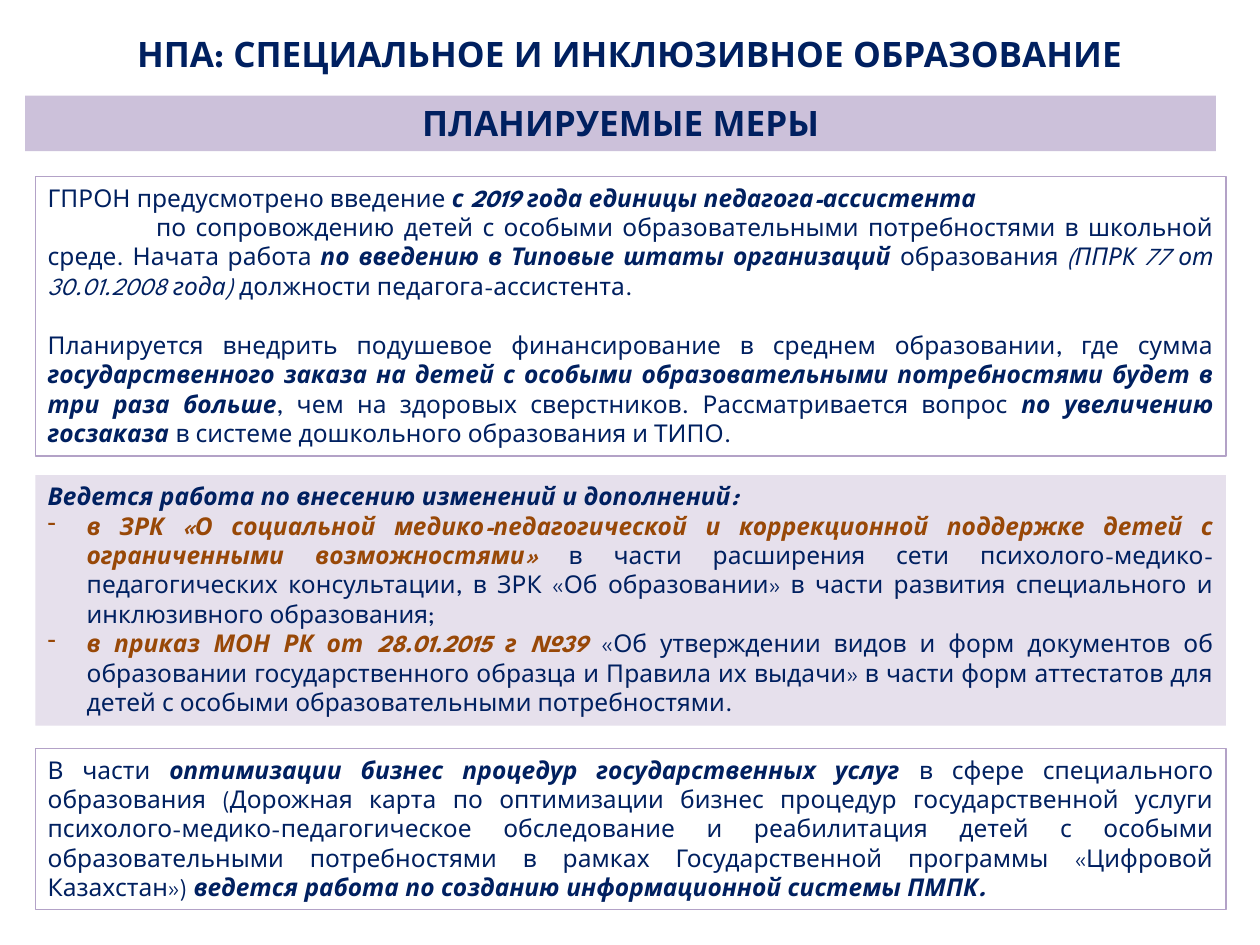
from lxml import etree
from pptx import Presentation
from pptx.dml.color import RGBColor
from pptx.enum.shapes import MSO_SHAPE
from pptx.enum.text import MSO_ANCHOR, MSO_AUTO_SIZE, PP_ALIGN
from pptx.oxml.ns import qn
from pptx.util import Inches, Pt

THEME = {
    "font": "League Spartan",
    "title_size": 20,
    "body_size": 14,
    "navy": "002060",
    "brown": "984807",
    "white": "FFFFFF",
    "banner": "CCC1DA",
    "panel": "E6E0EC",
    "border": "B3A2C7",
}
STYLES = {
    "plain": {},
    "italic": {"italic": True},
    "strong": {"bold": True, "italic": True},
    "accent": {"bold": True, "italic": True, "color": "brown"},
}

TITLE = "НПА: СПЕЦИАЛЬНОЕ И ИНКЛЮЗИВНОЕ ОБРАЗОВАНИЕ"
BANNER = "ПЛАНИРУЕМЫЕ МЕРЫ"

# Each paragraph: its layout options and its (style, text) runs.
ASSISTANTS = [
    ({}, [
        ("plain", "ГПРОН предусмотрено введение "),
        ("strong", "с 2019 года единицы педагога-ассистента"),
    ]),
    ({"indent": 0.86}, [
        ("plain", "по сопровождению детей с особыми образовательными потребностями "
                  "в школьной среде. Начата работа "),
        ("strong", "по введению в Типовые штаты организаций "),
        ("plain", "образования "),
        ("italic", "(ППРК 77 от 30.01.2008 года)"),
        ("plain", " должности педагога-ассистента."),
    ]),
    ({"space_before": 16.8}, [
        ("plain", "Планируется внедрить подушевое финансирование в среднем образовании, "
                  "где сумма "),
        ("strong", "государственного заказа на детей с особыми образовательными "
                   "потребностями будет в три раза больше"),
        ("plain", ", чем на здоровых сверстников. Рассматривается вопрос "),
        ("strong", "по увеличению госзаказа "),
        ("plain", "в системе дошкольного образования и ТИПО."),
    ]),
]
AMENDMENTS = [
    ({}, [("strong", "Ведется работа по внесению изменений и дополнений:")]),
    ({"bullet": "-"}, [
        ("accent", "в ЗРК «О социальной медико-педагогической и коррекционной поддержке "
                   "детей с ограниченными возможностями» "),
        ("plain", "в части расширения сети психолого-медико-педагогических консультации, "
                  "в ЗРК «Об образовании» в части развития специального и инклюзивного "
                  "образования;"),
    ]),
    ({"bullet": "-"}, [
        ("accent", "в приказ МОН РК от 28.01.2015 г №39 "),
        ("plain", "«Об утверждении видов и форм документов об образовании "
                  "государственного образца и Правила их выдачи» в части форм аттестатов "
                  "для детей с особыми образовательными потребностями."),
    ]),
]
SERVICES = [
    ({}, [
        ("plain", "В части "),
        ("strong", "оптимизации бизнес процедур государственных услуг "),
        ("plain", "в сфере специального образования (Дорожная карта по оптимизации бизнес "
                  "процедур государственной услуги психолого-медико-педагогическое "
                  "обследование и реабилитация детей с особыми образовательными "
                  "потребностями в рамках Государственной программы «Цифровой Казахстан») "),
        ("strong", "ведется работа по созданию информационной системы ПМПК."),
    ]),
]

PANEL_LEFT, PANEL_WIDTH = 0.28, 9.45
PANELS = [  # top, height, fill, line, paragraphs
    (1.4, 2.22, None, "border", ASSISTANTS),
    (3.77, 1.99, "panel", None, AMENDMENTS),
    (5.94, 1.28, None, "border", SERVICES),
]


def theme_color(name):
    return RGBColor.from_string(THEME[name])


def add_text(paragraph, text, size="body_size", color="navy", bold=False, italic=False):
    run = paragraph.add_run()
    run.text = text
    font = run.font
    font.name, font.size = THEME["font"], Pt(THEME[size])
    font.bold, font.italic = bold, italic
    font.color.rgb = theme_color(color)


def set_layout(paragraph, indent=0, bullet=None, space_before=0):
    paragraph.alignment = PP_ALIGN.JUSTIFY
    paragraph.space_before = Pt(space_before)
    properties = paragraph._p.get_or_add_pPr()
    hanging = 0.31 if bullet else 0
    properties.set("marL", str(Inches(hanging)))
    properties.set("indent", str(Inches(indent - hanging)))
    if bullet:
        etree.SubElement(properties, qn("a:buChar")).set("char", bullet)


def format_box(shape, fill=None, line=None, anchor=MSO_ANCHOR.TOP):
    if fill:
        shape.fill.solid()
        shape.fill.fore_color.rgb = theme_color(fill)
    else:
        shape.fill.background()
    if line:
        shape.line.color.rgb = theme_color(line)
        shape.line.width = Pt(0.75)
    else:
        shape.line.fill.background()
    frame = shape.text_frame
    frame.word_wrap = True
    frame.auto_size = MSO_AUTO_SIZE.SHAPE_TO_FIT_TEXT
    frame.vertical_anchor = anchor


def add_box(slide, left, top, width, height, **look):
    shape = slide.shapes.add_shape(
        MSO_SHAPE.RECTANGLE, Inches(left), Inches(top), Inches(width), Inches(height))
    shape.shadow.inherit = False
    format_box(shape, **look)
    return shape


def add_heading(shape, text):
    paragraph = shape.text_frame.paragraphs[0]
    paragraph.alignment = PP_ALIGN.CENTER
    add_text(paragraph, text, size="title_size", bold=True)


def add_panel(slide, top, height, fill, line, paragraphs):
    shape = add_box(slide, PANEL_LEFT, top, PANEL_WIDTH, height, fill=fill, line=line)
    frame = shape.text_frame
    for index, (layout, runs) in enumerate(paragraphs):
        paragraph = frame.add_paragraph() if index else frame.paragraphs[0]
        set_layout(paragraph, **layout)
        for style, text in runs:
            add_text(paragraph, text, **STYLES[style])


def main():
    presentation = Presentation()
    presentation.slide_width, presentation.slide_height = Inches(10), Inches(7.5)
    slide = presentation.slides.add_slide(presentation.slide_layouts[5])

    title = slide.shapes.title
    title.left, title.top = Inches(0.35), Inches(0.21)
    title.width, title.height = Inches(9.29), Inches(0.44)
    format_box(title, fill="white", line="white")
    add_heading(title, TITLE)

    banner = add_box(slide, 0.2, 0.76, PANEL_WIDTH, 0.44, fill="banner")
    add_heading(banner, BANNER)

    for panel in PANELS:
        add_panel(slide, *panel)

    presentation.save("out.pptx")


if __name__ == "__main__":
    main()
